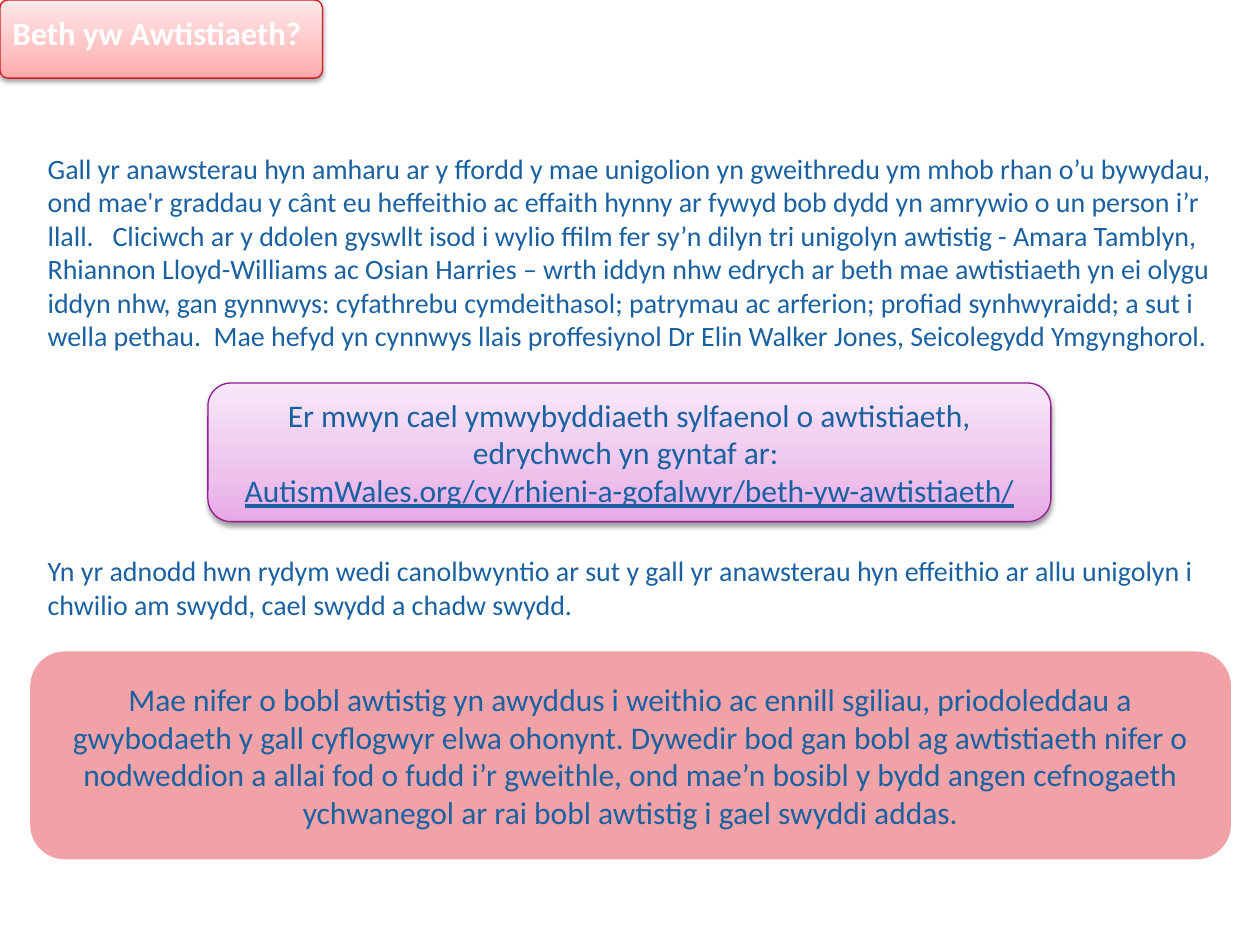
from lxml.etree import SubElement
from pptx import Presentation
from pptx.dml.color import RGBColor
from pptx.enum.shapes import MSO_SHAPE as SHAPE
from pptx.enum.text import MSO_ANCHOR as ANCHOR, PP_ALIGN as ALIGN
from pptx.oxml import parse_xml
from pptx.oxml.ns import nsdecls, qn
from pptx.util import Inches, Pt

COLORS = {
    "text": "1A61A2",
    "white": "FFFFFF",
    "salmon": "F1A2A6",
    "red": "D31A24",
    "purple": "931C92",
    "shadow": "000000",
}
RED_STOPS = [(0, "FFA9AA"), (35, "FFC2C3"), (100, "FFE8E8")]
PURPLE_STOPS = [(0, "E7A9E6"), (35, "EDC3EC"), (100, "F9E8F9")]

TITLE = "Beth yw Awtistiaeth?"
DIFFICULTIES = (
    "Gall yr anawsterau hyn amharu ar y ffordd y mae unigolion yn gweithredu ym mhob rhan o’u "
    "bywydau, ond mae'r graddau y cânt eu heffeithio ac effaith hynny ar fywyd bob dydd yn "
    "amrywio o un person i’r llall.   Cliciwch ar y ddolen gyswllt isod i wylio ffilm fer sy’n "
    "dilyn tri unigolyn awtistig - Amara Tamblyn, Rhiannon Lloyd-Williams ac Osian Harries – "
    "wrth iddyn nhw edrych ar beth mae awtistiaeth yn ei olygu iddyn nhw, gan gynnwys: "
    "cyfathrebu cymdeithasol; patrymau ac arferion; profiad synhwyraidd; a sut i wella pethau.  "
    "Mae hefyd yn cynnwys llais proffesiynol Dr Elin Walker Jones, Seicolegydd Ymgynghorol."
)
FOCUS = (
    "Yn yr adnodd hwn rydym wedi canolbwyntio ar sut y gall yr anawsterau hyn effeithio ar allu "
    "unigolyn i chwilio am swydd, cael swydd a chadw swydd."
)
STRENGTHS = (
    "Mae nifer o bobl awtistig yn awyddus i weithio ac ennill sgiliau, priodoleddau a "
    "gwybodaeth y gall cyflogwyr elwa ohonynt. Dywedir bod gan bobl ag awtistiaeth nifer o "
    "nodweddion a allai fod o fudd i’r gweithle, ond mae’n bosibl y bydd angen cefnogaeth "
    "ychwanegol ar rai bobl awtistig i gael swyddi addas."
)
LINK_INTRO = "Er mwyn cael ymwybyddiaeth sylfaenol o awtistiaeth, edrychwch yn gyntaf ar: "
LINK = "AutismWales.org/cy/rhieni-a-gofalwyr/beth-yw-awtistiaeth/"


def rgb(name):
    return RGBColor.from_string(COLORS[name])


def write(p, text, size=18, color="text", bold=False, underline=False,
          align=ALIGN.CENTER, before=0):
    p.alignment = align
    p.space_before = Pt(before)
    r = p.add_run()
    r.text = text
    r.font.name = "Calibri"
    r.font.size = Pt(size)
    r.font.bold = bold
    r.font.underline = underline
    r.font.color.rgb = rgb(color)


def frame(sp, anchor):
    tf = sp.text_frame
    tf.word_wrap = True
    tf.vertical_anchor = anchor
    return tf


def panel(s, left, top, width, height):
    sp = s.shapes.add_shape(SHAPE.ROUNDED_RECTANGLE, Inches(left), Inches(top),
                            Inches(width), Inches(height))
    sp.shadow.inherit = False
    sp.fill.solid()
    sp.fill.fore_color.rgb = rgb("salmon")
    sp.line.fill.background()
    frame(sp, ANCHOR.MIDDLE)
    return sp


def glossy_panel(s, left, top, width, height, stops, line):
    sp = panel(s, left, top, width, height)
    sp.line.color.rgb = rgb(line)
    sp.line.width = Pt(0.75)
    gs = "".join(f'<a:gs pos="{pos * 1000}"><a:srgbClr val="{color}"/></a:gs>'
                 for pos, color in stops)
    gradient = parse_xml(f'<a:gradFill {nsdecls("a")} rotWithShape="1"><a:gsLst>{gs}</a:gsLst>'
                         '<a:lin ang="16200000" scaled="0"/></a:gradFill>')
    props = sp._element.spPr
    props.replace(props.find(qn("a:solidFill")), gradient)
    shadow = SubElement(props.find(qn("a:effectLst")), qn("a:outerShdw"),
                        blurRad=str(Pt(3.1)), dist=str(Pt(1.6)), dir="5400000",
                        rotWithShape="0")
    color = SubElement(shadow, qn("a:srgbClr"), val=COLORS["shadow"])
    SubElement(color, qn("a:alpha"), val="38000")
    return sp


def body(s):
    sp = s.shapes.add_textbox(Inches(0.28), Inches(1.15), Inches(9.52), Inches(6.33))
    tf = frame(sp, ANCHOR.TOP)
    write(tf.paragraphs[0], DIFFICULTIES, size=16, align=ALIGN.LEFT)
    write(tf.add_paragraph(), FOCUS, size=16, align=ALIGN.LEFT, before=115)


def title_tab(s):
    tab = glossy_panel(s, 0, 0, 2.56, 0.62, RED_STOPS, "red")
    tab.adjustments[0] = 0.1
    title = s.shapes.title
    title.left, title.top = Inches(0), Inches(0.05)
    title.width, title.height = Inches(2.56), Inches(0.57)
    tf = frame(title, ANCHOR.TOP)
    write(tf.paragraphs[0], TITLE, size=18.6, color="white", bold=True, align=ALIGN.LEFT)
    tab._element.addnext(title._element)


def main():
    prs = Presentation()
    prs.slide_width, prs.slide_height = Inches(10), Inches(7.5)
    s = prs.slides.add_slide(prs.slide_layouts[5])
    body(s)
    title_tab(s)
    strengths = panel(s, 0.24, 5.17, 9.53, 1.65)
    write(strengths.text_frame.paragraphs[0], STRENGTHS)
    link = glossy_panel(s, 1.65, 3.04, 6.69, 1.1, PURPLE_STOPS, "purple")
    write(link.text_frame.paragraphs[0], LINK_INTRO)
    write(link.text_frame.add_paragraph(), LINK, underline=True)
    prs.save("out.pptx")


if __name__ == "__main__":
    main()
